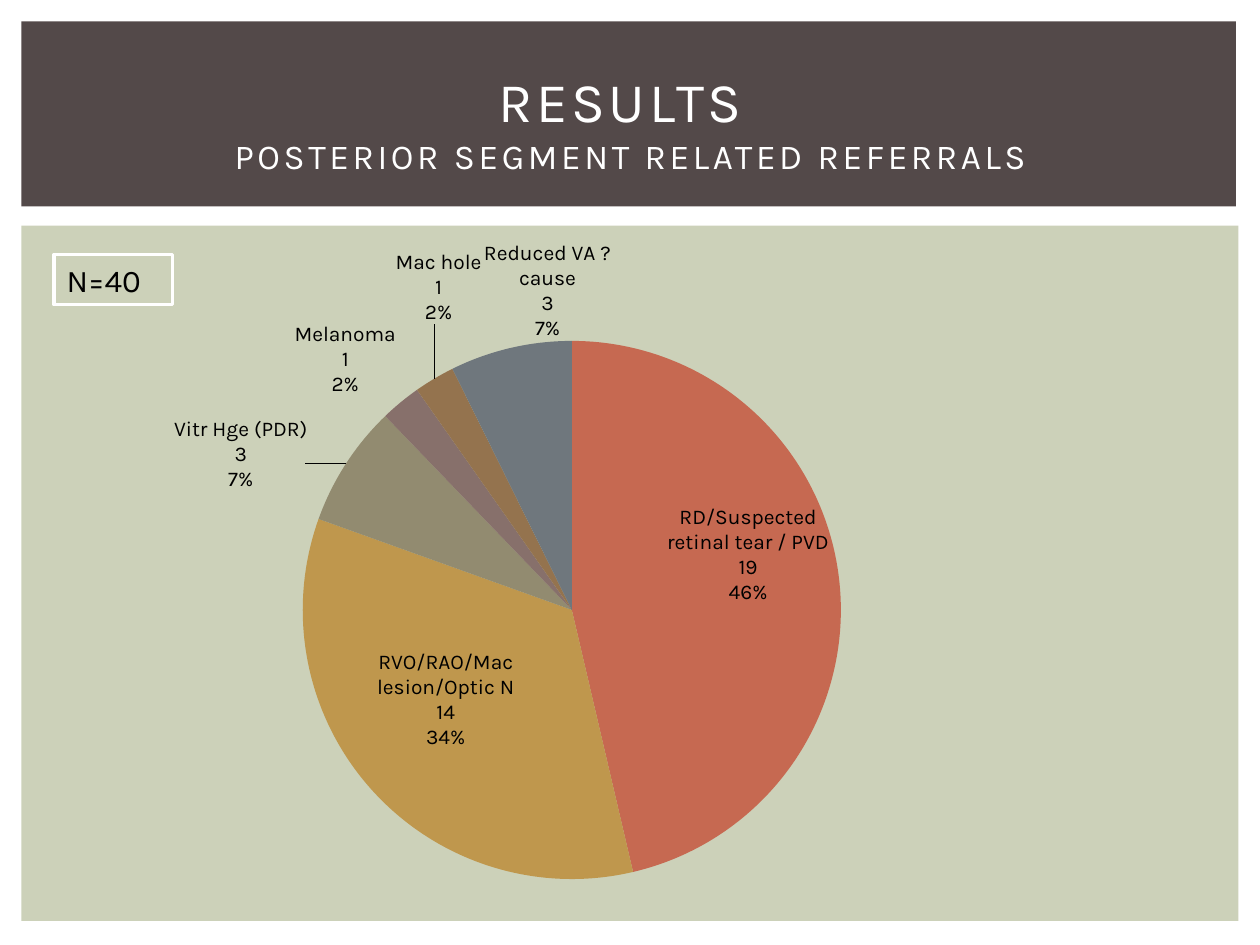
import pptx
import pptx.util
import pptx.chart.data
import pptx.dml.color
import pptx.enum.chart
import pptx.enum.shapes
import pptx.enum.text
import pptx.oxml
import pptx.oxml.ns

Pt = pptx.util.Pt
Align = pptx.enum.text.PP_ALIGN
Anchor = pptx.enum.text.MSO_ANCHOR
Place = pptx.enum.chart.XL_LABEL_POSITION

# Content
FONT = "Karla"
TITLE = "RESULTS \vPOSTERIOR SEGMENT RELATED REFERRALS"
COUNT = "N=40"
MID, OUT = Place.CENTER, Place.OUTSIDE_END
# name, value, colour, label place, label shift (share of chart size)
SLICES = [
    ("RD/Suspected\nretinal tear / PVD", 19, "C66951", MID, (0.05, -0.05)),
    ("RVO/RAO/Mac lesion/Optic N", 14, "BF974D", MID, (-0.03, 0)),
    ("Vitr Hge (PDR)", 3, "928B70", OUT, (-0.04, 0.04)),
    ("Melanoma", 1, "87706B", OUT, None),
    ("Mac hole", 1, "94734E", OUT, (0.06, -0.06)),
    ("Reduced VA ?\ncause", 3, "6F777D", OUT, (0.12, 0)),
]
PANELS = [
    ((12.2, 128.9, 695.5, 397.4), "CCD1B9"),
    ((12.2, 12.2, 694.1, 105.8), "534949"),
]
CHART = (99.4, 105.8, 487.4, 454.3)
PIE = (173.2, 194.9, 307.4, 307.4)


def color(code):
    return pptx.dml.color.RGBColor.from_string(code)


def box(area):
    return [Pt(v) for v in area]


def style(font, size, code):
    font.name, font.size = FONT, Pt(size)
    font.color.rgb = color(code)


def rect(area):
    shape = slide.shapes.add_shape(
        pptx.enum.shapes.MSO_SHAPE.RECTANGLE, *box(area))
    shape.shadow.inherit = False
    return shape


def layout(**parts):
    body = "".join(f'<c:{k} val="{v}"/>' for k, v in parts.items())
    space = pptx.oxml.ns.nsdecls("c")
    return pptx.oxml.parse_xml(
        f"<c:layout {space}><c:manualLayout>{body}</c:manualLayout></c:layout>")


def show(node):
    """Show name, value and percent on separate lines."""
    for key in ("showVal", "showCatName", "showPercent"):
        node.find(pptx.oxml.ns.qn("c:" + key)).set("val", "1")
    mark = pptx.oxml.parse_xml(
        f'<c:separator {pptx.oxml.ns.nsdecls("c")}>\n</c:separator>')
    last = node.find(pptx.oxml.ns.qn("c:showBubbleSize"))
    if last is None:
        last = node.find(pptx.oxml.ns.qn("c:showPercent"))
    last.addnext(mark)


deck = pptx.Presentation()
deck.slide_width, deck.slide_height = Pt(720), Pt(540)
slide = deck.slides.add_slide(deck.slide_layouts[5])
title = slide.shapes.title

# Background panels, kept behind the title
for area, code in PANELS:
    panel = rect(area)
    panel.fill.solid()
    panel.fill.fore_color.rgb = color(code)
    panel.line.fill.background()
    title._element.addprevious(panel._element)

# Title
title.left, title.top, title.width, title.height = box((30.2, 28.1, 660.2, 82.8))
frame = title.text_frame
frame.text = TITLE
frame.word_wrap = True
frame.vertical_anchor = Anchor.MIDDLE
head = frame.paragraphs[0]
head.alignment = Align.CENTER
for run, size in zip(head.runs, (32, 20)):
    style(run.font, size, "FFFFFF")
    run.font._element.set("spc", "200")

# Pie chart
data = pptx.chart.data.CategoryChartData()
data.categories = [s[0] for s in SLICES]
data.add_series("Series 1", [s[1] for s in SLICES])
chart = slide.shapes.add_chart(
    pptx.enum.chart.XL_CHART_TYPE.PIE, *box(CHART), data).chart
chart.has_legend = chart.has_title = False
style(chart.font, 10, "000000")
plot = chart.plots[0]
plot.vary_by_categories = True

area = chart._chartSpace.chart.plotArea
for old in area.findall(pptx.oxml.ns.qn("c:layout")):
    area.remove(old)
area.insert(0, layout(
    layoutTarget="inner", xMode="edge", yMode="edge",
    x=round((PIE[0] - CHART[0]) / CHART[2], 3),
    y=round((PIE[1] - CHART[1]) / CHART[3], 3),
    w=round(PIE[2] / CHART[2], 3), h=round(PIE[3] / CHART[3], 3)))

# Slice colours and labels
series = plot.series[0]
labels = series.data_labels
style(labels.font, 12, "000000")
labels.position = OUT
show(labels._element)
for i, (name, value, code, place, shift) in enumerate(SLICES):
    point = series.points[i]
    point.format.fill.solid()
    point.format.fill.fore_color.rgb = color(code)
    label = point.data_label
    style(label.font, 12, "000000")
    label.position = place
    node = labels._element.findall(pptx.oxml.ns.qn("c:dLbl"))[i]
    show(node)
    if shift:
        node.find(pptx.oxml.ns.qn("c:idx")).addnext(
            layout(x=shift[0], y=shift[1]))

# Sample size
note = rect((31, 145.4, 67.7, 28.8))
note.fill.background()
note.line.color.rgb = color("FFFFFF")
note.line.width = Pt(2)
note.text_frame.text = COUNT
note.text_frame.word_wrap = True
note.text_frame.vertical_anchor = Anchor.TOP
line = note.text_frame.paragraphs[0]
line.alignment = Align.LEFT
style(line.runs[0].font, 18, "000000")

deck.save("out.pptx")
